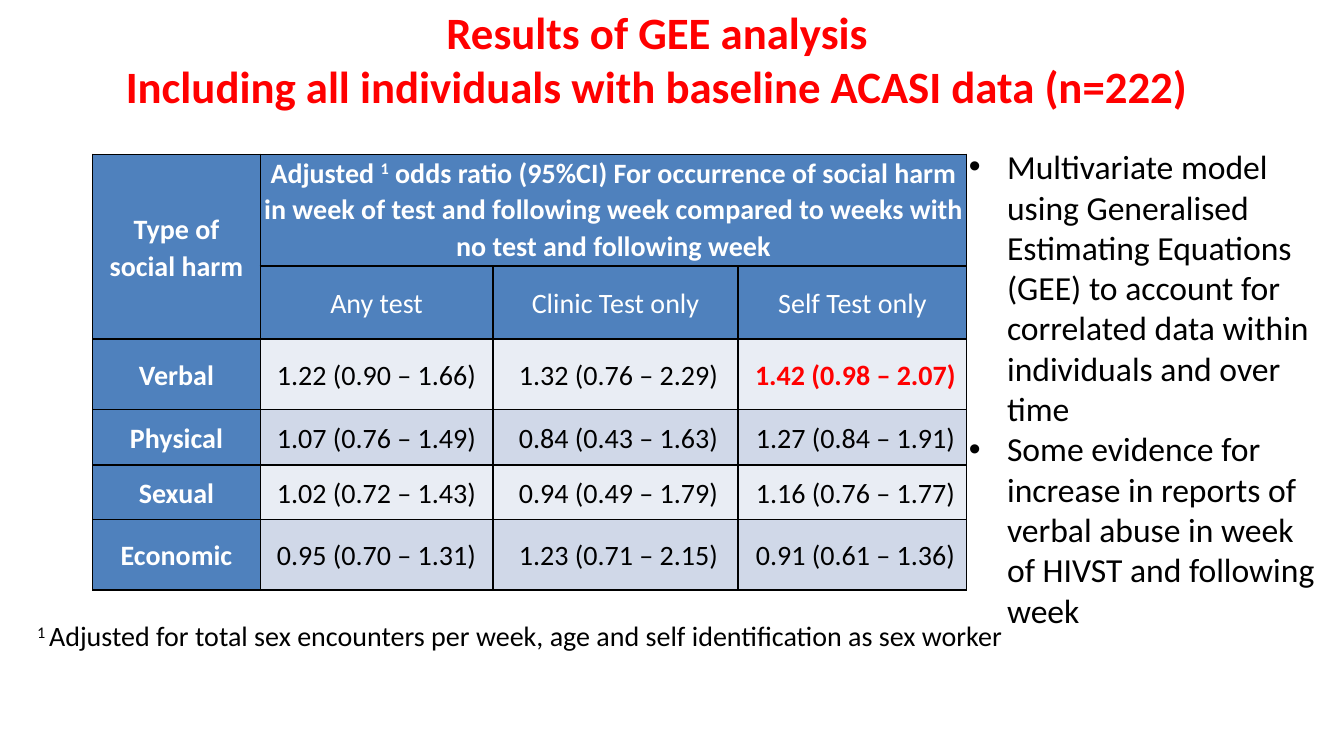
import pptx
import pptx.dml.color
import pptx.enum.text
import pptx.oxml
import pptx.oxml.ns
import pptx.util
from pptx.util import Inches

COLORS = {
    "alert": "FF0000",
    "text": "000000",
    "header": "4F81BD",
    "header_text": "FFFFFF",
    "odd_row": "E9EDF4",
    "even_row": "D0D8E8",
    "border": "000000",
}
FONT = "Calibri"
CENTER = pptx.enum.text.PP_ALIGN.CENTER
MIDDLE = pptx.enum.text.MSO_ANCHOR.MIDDLE
TOP = pptx.enum.text.MSO_ANCHOR.TOP

TITLE = ["Results of GEE analysis",
         "Including all individuals with baseline ACASI data (n=222)"]
FINDINGS = [
    "Multivariate model using Generalised Estimating Equations (GEE) to account "
    "for correlated data within individuals and over time",
    "Some evidence for increase in reports of verbal abuse in week of HIVST and "
    "following week",
]
# Each entry is a list of (text, is_superscript) pieces
ODDS_HEADING = [
    ("Adjusted ", False), ("1", True),
    (" odds ratio (95%CI) For occurrence of social harm in week of test and "
     "following week compared to weeks with no test and following week", False),
]
FOOTNOTE = [
    ("1 ", True),
    ("Adjusted for total sex encounters per week, age and self identification "
     "as sex worker", False),
]
TEST_KINDS = ["Any test", "Clinic Test only", "Self Test only"]
ODDS_RATIOS = [
    ("Verbal", "1.22 (0.90 – 1.66)", "1.32 (0.76 – 2.29)", "1.42 (0.98 – 2.07)"),
    ("Physical", "1.07 (0.76 – 1.49)", "0.84 (0.43 – 1.63)", "1.27 (0.84 – 1.91)"),
    ("Sexual", "1.02 (0.72 – 1.43)", "0.94 (0.49 – 1.79)", "1.16 (0.76 – 1.77)"),
    ("Economic", "0.95 (0.70 – 1.31)", "1.23 (0.71 – 2.15)", "0.91 (0.61 – 1.36)"),
]
HIGHLIGHT = (2, 3)
COLUMN_WIDTHS = [1.66, 2.31, 2.43, 2.27]
ROW_HEIGHTS = [1.11, 0.72, 0.7, 0.55, 0.54, 0.7]


def rgb(name):
    return pptx.dml.color.RGBColor.from_string(COLORS[name])


def style_runs(paragraph, size, color, bold=False):
    for run in paragraph.runs:
        run.font.name = FONT
        run.font.size = pptx.util.Pt(size)
        run.font.bold = bold
        run.font.color.rgb = rgb(color)


def add_pieces(paragraph, pieces):
    """Add runs, raising those marked as superscript."""
    for text, is_superscript in pieces:
        run = paragraph.add_run()
        run.text = text
        if is_superscript:
            run._r.get_or_add_rPr().set("baseline", "30000")


def add_bullet(paragraph, indent):
    properties = paragraph._p.get_or_add_pPr()
    properties.set("marL", str(indent))
    properties.set("indent", str(-indent))
    for tag, attribute, value in (("buFont", "typeface", "Arial"),
                                  ("buChar", "char", "•")):
        element = pptx.oxml.parse_xml(
            f'<a:{tag} {pptx.oxml.ns.nsdecls("a")} {attribute}="{value}"/>')
        properties.append(element)


def add_borders(cell):
    properties = cell._tc.get_or_add_tcPr()
    for position, side in enumerate("LRTB"):
        line = pptx.oxml.parse_xml(
            f'<a:ln{side} {pptx.oxml.ns.nsdecls("a")} w="{pptx.util.Pt(1)}">'
            f'<a:solidFill><a:srgbClr val="{COLORS["border"]}"/></a:solidFill>'
            f'</a:ln{side}>')
        properties.insert(position, line)


def place_title(slide, left, top, width, height):
    title = slide.shapes.title
    title.left, title.top = Inches(left), Inches(top)
    title.width, title.height = Inches(width), Inches(height)
    frame = title.text_frame
    frame.auto_size = pptx.enum.text.MSO_AUTO_SIZE.NONE
    frame.vertical_anchor = TOP
    frame.text = "\n".join(TITLE)
    for paragraph in frame.paragraphs:
        paragraph.alignment = CENTER
        style_runs(paragraph, 32, "alert", bold=True)


def add_wrapped_box(slide, left, top, width, height):
    box = slide.shapes.add_textbox(
        Inches(left), Inches(top), Inches(width), Inches(height))
    box.text_frame.word_wrap = True
    return box.text_frame


def add_findings(slide, left, top, width, height):
    frame = add_wrapped_box(slide, left, top, width, height)
    frame.text = "\n".join(FINDINGS)
    for paragraph in frame.paragraphs:
        add_bullet(paragraph, Inches(0.38))
        style_runs(paragraph, 24, "text")


def add_footnote(slide, left, top, width, height):
    frame = add_wrapped_box(slide, left, top, width, height)
    add_pieces(frame.paragraphs[0], FOOTNOTE)
    style_runs(frame.paragraphs[0], 20, "text")


def set_cell_margins(cell, row, column):
    """Pad the outer columns, and shift the last two columns of values right."""
    padding = 0.07 if column in (0, 3) else 0
    shift = 0.06 if row >= 2 and column >= 2 else 0
    cell.margin_left = Inches(padding + shift)
    cell.margin_right = Inches(padding)
    cell.margin_top = Inches(0.01 if padding else 0)
    cell.margin_bottom = 0


def style_cell(cell, row, column):
    is_header = row < 2 or column == 0
    band = "odd_row" if row % 2 == 0 else "even_row"
    cell.fill.solid()
    cell.fill.fore_color.rgb = rgb("header" if is_header else band)
    cell.vertical_anchor = TOP if (row, column) == (0, 1) else MIDDLE
    set_cell_margins(cell, row, column)
    add_borders(cell)

    highlighted = (row, column) == HIGHLIGHT
    color = "header_text" if is_header else "alert" if highlighted else "text"
    paragraph = cell.text_frame.paragraphs[0]
    paragraph.alignment = CENTER
    paragraph.line_spacing = 1.07
    paragraph.space_after = pptx.util.Pt(8)
    style_runs(paragraph, 20, color, bold=row == 0 or column == 0 or highlighted)


def add_odds_table(slide, left, top):
    table = slide.shapes.add_table(
        len(ROW_HEIGHTS), len(COLUMN_WIDTHS), Inches(left), Inches(top),
        Inches(sum(COLUMN_WIDTHS)), Inches(sum(ROW_HEIGHTS))).table
    table.first_row = table.horz_banding = False
    for column, width in zip(table.columns, COLUMN_WIDTHS):
        column.width = Inches(width)
    for row, height in zip(table.rows, ROW_HEIGHTS):
        row.height = Inches(height)

    table.cell(0, 0).merge(table.cell(1, 0))
    table.cell(0, 1).merge(table.cell(0, 3))
    table.cell(0, 0).text = "Type of social harm"
    add_pieces(table.cell(0, 1).text_frame.paragraphs[0], ODDS_HEADING)
    for column, test_kind in enumerate(TEST_KINDS, start=1):
        table.cell(1, column).text = test_kind
    for row, values in enumerate(ODDS_RATIOS, start=2):
        for column, value in enumerate(values):
            table.cell(row, column).text = value

    for row in range(len(ROW_HEIGHTS)):
        for column in range(len(COLUMN_WIDTHS)):
            style_cell(table.cell(row, column), row, column)


def main():
    deck = pptx.Presentation()
    deck.slide_width, deck.slide_height = Inches(13.33), Inches(7.5)
    slide = deck.slides.add_slide(deck.slide_layouts.get_by_name("Title Only"))
    place_title(slide, 0.27, 0, 12.5, 1.18)
    add_findings(slide, 9.51, 1.4, 3.72, 4.95)
    add_odds_table(slide, 0.92, 1.53)
    add_footnote(slide, 0.27, 6.09, 11.24, 0.44)
    deck.save("out.pptx")


if __name__ == "__main__":
    main()
